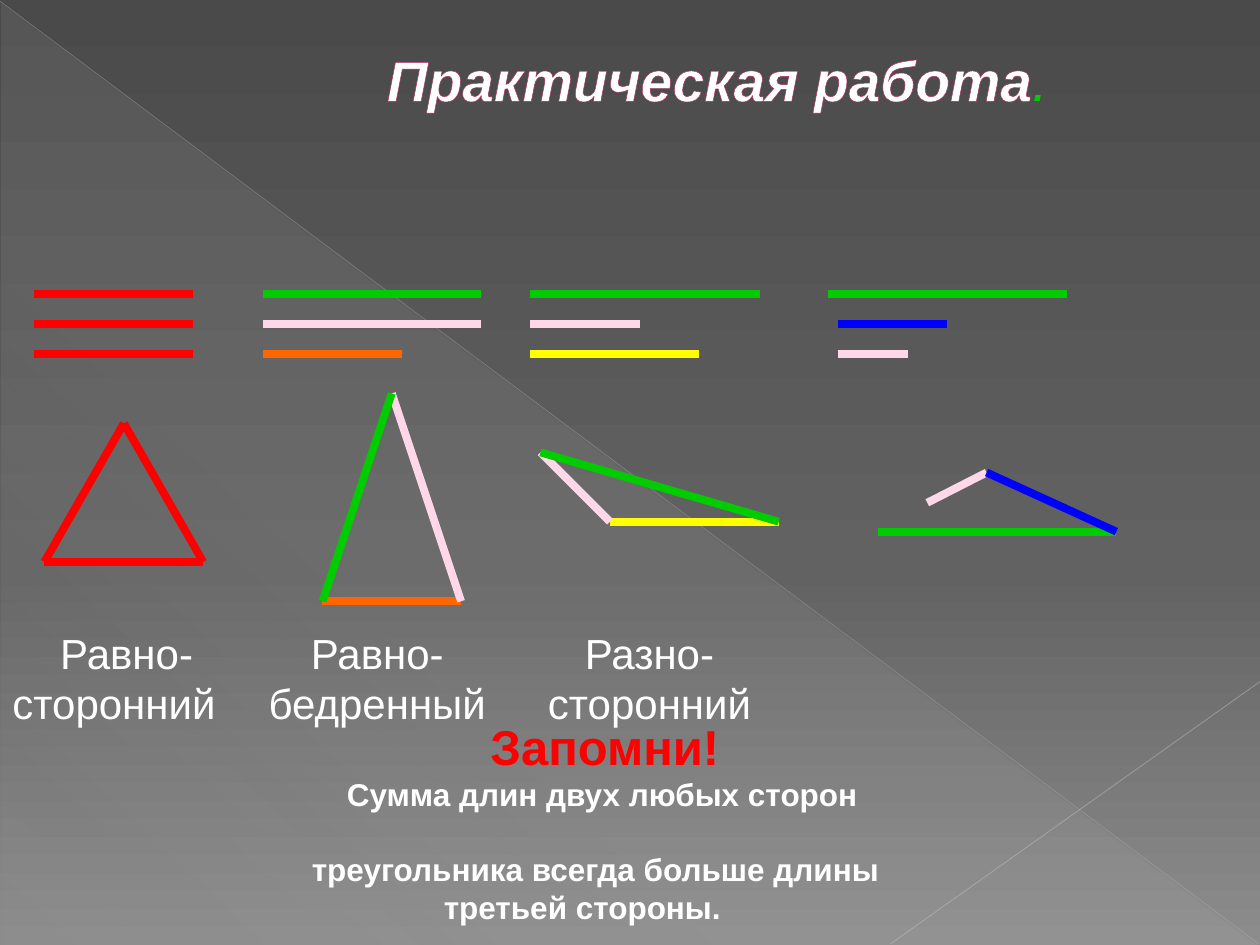
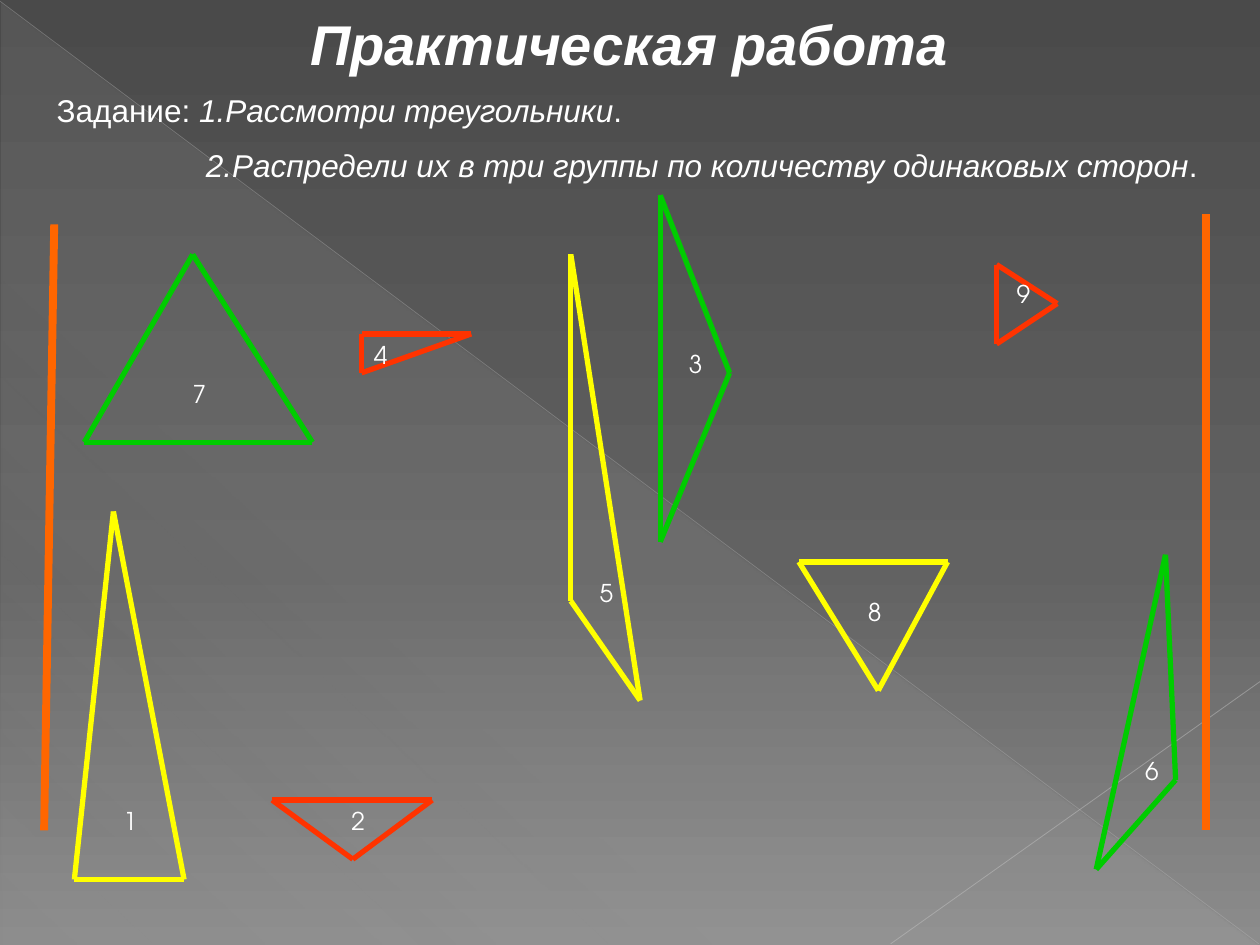
from lxml import etree
from pptx import Presentation
from pptx.dml.color import RGBColor
from pptx.enum.shapes import MSO_CONNECTOR as CONNECTOR, MSO_SHAPE as SHAPE
from pptx.enum.text import MSO_ANCHOR as ANCHOR, MSO_AUTO_SIZE as AUTOSIZE, PP_ALIGN as ALIGN
from pptx.oxml.ns import qn
from pptx.util import Pt

WHITE, RED, GREEN, YELLOW = "FFFFFF", "FF0000", "00CC00", "FFFF00"
PINK, ORANGE, BLUE, SCARLET = "FFD7E8", "FF6600", "0000FF", "FF3300"
TEXT_FONT, NUMBER_FONT = "Arial", "TeX Gyre Adventor"
THICK, THIN = 4.5, 3
HEADING = "Практическая работа"


def rgb(color):
    return RGBColor.from_string(color)


# Shared drawing helpers
def set_gradient(fill, owner, stops, angle):
    """Stops are (position %, colour, opacity %)."""
    fill.gradient()
    gradient = next(owner.iter(qn("a:gradFill")))
    for child in list(gradient):
        gradient.remove(child)
    stop_list = etree.SubElement(gradient, qn("a:gsLst"))
    for position, color, opacity in stops:
        stop = etree.SubElement(stop_list, qn("a:gs"), pos=str(position * 1000))
        tint = etree.SubElement(stop, qn("a:srgbClr"), val=color)
        etree.SubElement(tint, qn("a:alpha"), val=str(opacity * 1000))
    etree.SubElement(gradient, qn("a:lin"), ang=str(angle * 60000), scaled="0")


def draw_line(slide, color, start, end, width, origin=(0, 0), opacity=100):
    x, y = origin
    line = slide.shapes.add_connector(
        CONNECTOR.STRAIGHT, Pt(x + start[0]), Pt(y + start[1]), Pt(x + end[0]), Pt(y + end[1]))
    line.line.color.rgb = rgb(color)
    line.line.width = Pt(width)
    properties = line.element.spPr
    etree.SubElement(properties, qn("a:effectLst"))
    if opacity < 100:
        tint = next(properties.iter(qn("a:srgbClr")))
        etree.SubElement(tint, qn("a:alpha"), val=str(opacity * 1000))
    return line


def place(shape, box):
    shape.left, shape.top, shape.width, shape.height = map(Pt, box)


def style(font, size, color=WHITE, name=TEXT_FONT, bold=False, italic=False):
    font.size, font.name, font.bold, font.italic = Pt(size), name, bold, italic
    font.color.rgb = rgb(color)


def indent(paragraph, left):
    properties = paragraph._p.get_or_add_pPr()
    properties.set("marL", str(Pt(left)))
    properties.set("indent", "0")


def add_text(slide, box, lines, wrap=True):
    """Return the paragraphs of a new text box."""
    frame = slide.shapes.add_textbox(*map(Pt, box)).text_frame
    frame.word_wrap = wrap
    frame.text = "\n".join(lines)
    return frame.paragraphs


def set_heading(slide, box, size):
    title = slide.shapes.title
    place(title, box)
    frame = title.text_frame
    frame.auto_size = AUTOSIZE.NONE
    frame.vertical_anchor = ANCHOR.MIDDLE
    frame.text = HEADING
    paragraph = frame.paragraphs[0]
    style(paragraph.font, size, bold=True, italic=True)
    return paragraph


# Shared backdrop, kept on the slide master
def build_backdrop(master, slide):
    set_gradient(master.background.fill, master.element,
                 [(0, "4A4A4A", 100), (60, "626262", 100), (100, "8C8C8C", 100)], 90)
    glow = slide.shapes.add_shape(SHAPE.RIGHT_TRIANGLE, Pt(0.7), Pt(1.4), Pt(718.6), Pt(538.6))
    glow.shadow.inherit = False
    glow.line.fill.background()
    set_gradient(glow.fill, glow.element,
                 [(0, "D2D2D2", 10), (70, "D2D2D2", 8), (100, "D2D2D2", 1)], 133)
    diagonal = draw_line(slide, "BFBFBF", (0, 0.7), (719.3, 539.3), 0.39, opacity=35)
    corner = draw_line(slide, "C6C6C6", (720, 389.5), (509, 539.3), 0.47, opacity=45)
    tree = master.element.cSld.spTree
    for position, part in enumerate((glow, diagonal, corner), start=2):
        tree.insert(position, part.element)


# Slide 1: sticks and the triangles made of them
STICK_TOP, STICK_PITCH = 168, 17.15
# left edge; sticks (colour, offset, length); sides (colour, start, end) from the first stick
STICK_SETS = [
    (19.6,
     [(RED, 0, 90.7)] * 3,
     [(RED, (5.8, 153.1), (96.5, 153.1)),
      (RED, (51.2, 73.9), (96.5, 153.1)),
      (RED, (51.2, 73.9), (5.8, 153.1))]),
    (150.5,
     [(GREEN, 0, 124.6), (PINK, 0, 124.6), (ORANGE, 0, 79.2)],
     [(ORANGE, (33.8, 175.6), (113, 175.6)),
      (PINK, (73.4, 56.8), (113, 175.6)),
      (GREEN, (73.4, 56.8), (33.8, 175.6))]),
    (303.1,
     [(GREEN, 0, 131), (PINK, 0, 62.6), (YELLOW, 0, 96.5)],
     [(YELLOW, (45.4, 130.1), (141.9, 130.1)),
      (PINK, (45.4, 130.1), (5.8, 90.5)),
      (GREEN, (5.8, 90.5), (141.9, 130.1))]),
    (473,
     [(GREEN, 0, 136.8), (BLUE, 5.8, 62.6), (PINK, 5.8, 40.3)],
     [(GREEN, (28.8, 135.8), (164.9, 135.8)),
      (PINK, (56.9, 119.3), (90.8, 102)),
      (BLUE, (164.9, 135.8), (90.8, 102))]),
]
# box left, box width, lines, alignment of each line
KINDS = [
    (0, 144.7, ["Равно-", "сторонний"], [ALIGN.CENTER, ALIGN.LEFT]),
    (144.7, 141.8, ["Равно-бедренный"], [ALIGN.CENTER]),
    (303.1, 136.1, ["Разно-", "сторонний"], [ALIGN.CENTER] * 2),
]


def draw_stick_set(slide, origin, sticks, sides):
    for row, (color, offset, length) in enumerate(sticks):
        y = row * STICK_PITCH
        draw_line(slide, color, (offset, y), (offset + length, y), THICK, origin)
    for color, start, end in sides:
        draw_line(slide, color, start, end, THICK, origin)


def write_rule(slide, box):
    remember, *rule = add_text(slide, box, [
        "Запомни!", "Сумма длин двух любых сторон",
        "треугольника всегда больше длины", "третьей стороны."])
    remember.alignment = ALIGN.CENTER
    style(remember.font, 28, RED, bold=True)
    for paragraph, left in zip(rule, (75.2, 55.2, 130.6)):
        style(paragraph.font, 18, bold=True)
        paragraph.line_spacing = Pt(21.4)
        indent(paragraph, left)
    rule[1].space_before = Pt(21.4)


def build_sticks_slide(slide):
    heading = set_heading(slide, (56.9, 22.3, 620.6, 45.4), 32.4)
    heading.alignment = ALIGN.LEFT
    indent(heading, 157)
    outline = etree.Element(qn("a:ln"), w=str(Pt(0.5)))
    fill = etree.SubElement(outline, qn("a:solidFill"))
    etree.SubElement(fill, qn("a:srgbClr"), val="B12761")
    heading.runs[0].font._element.insert(0, outline)
    full_stop = heading.add_run()
    full_stop.text = "."
    style(full_stop.font, 32.4, GREEN, italic=True)

    for left, sticks, sides in STICK_SETS:
        draw_stick_set(slide, (left, STICK_TOP), sticks, sides)
    write_rule(slide, (115.9, 406, 459.4, 130))
    for left, width, lines, alignments in KINDS:
        for paragraph, alignment in zip(add_text(slide, (left, 355, width, 65.5), lines), alignments):
            paragraph.alignment = alignment
            style(paragraph.font, 24)


# Slide 2: numbered triangles to sort
# colour, box corner, vertices and number position from that corner
TRIANGLES = [
    (YELLOW, (42.5, 292.3), [(22.3, 0), (62.7, 210.3), (0, 210.3)], (20.9, 164.9)),
    (SCARLET, (155.5, 457.2), [(0, 0), (91.5, 0), (46.1, 33.8)], (38.2, 0)),
    (GREEN, (377.3, 111.6), [(0, 0), (39.6, 101.5), (0, 198)], (9.3, 84.2)),
    (SCARLET, (206.6, 190.8), [(0, 0), (62.7, 0), (0, 22.3)], (0, 0)),
    (YELLOW, (326.2, 145.4), [(0, 0), (0, 198), (39.6, 254.9)], (9.3, 181.5)),
    (GREEN, (626.4, 317), [(39.6, 0), (45.4, 128.7), (0, 179.8)], (20.9, 111.4)),
    (GREEN, (48.2, 145.4), [(61.9, 0), (130.3, 107.3), (0, 107.3)], (54.8, 67.7)),
    (YELLOW, (456.5, 321.1), [(0, 0), (85, 0), (45.4, 73.5)], (32.4, 16.6)),
    (SCARLET, (569.5, 151.2), [(0, 0), (34.6, 22.3), (0, 45.4)], (4.3, 5)),
]


def draw_triangle(slide, number, color, corner, vertices, number_at):
    for start, end in zip(vertices, vertices[1:] + vertices[:1]):
        draw_line(slide, color, start, end, THIN, corner)
    box = (corner[0] + number_at[0], corner[1] + number_at[1], 22.3, 23.8)
    label = add_text(slide, box, [str(number)], wrap=False)[0]
    style(label.font, 14, name=NUMBER_FONT)


def write_tasks(slide, box):
    tasks = slide.placeholders[1]
    place(tasks, box)
    frame = tasks.text_frame
    frame.auto_size = AUTOSIZE.NONE
    frame.text = "\n"
    steps = [
        (0, 10, ["Задание: ", "1.Рассмотри треугольники", "."]),
        (85.3, 0, ["2.Распредели их в три группы по количеству одинаковых сторон", "."]),
    ]
    for paragraph, (left, gap, pieces) in zip(frame.paragraphs, steps):
        style(paragraph.font, 18)
        paragraph.space_before, paragraph.space_after = Pt(0), Pt(gap)
        indent(paragraph, left)
        bullet = etree.Element(qn("a:buNone"))
        paragraph._p.pPr.find(qn("a:defRPr")).addprevious(bullet)
        for piece in pieces:
            run = paragraph.add_run()
            run.text = piece
            style(run.font, 18, italic=piece[0].isdigit())


def build_sorting_slide(slide):
    set_heading(slide, (25.2, 0, 669, 49), 32).alignment = ALIGN.CENTER
    write_tasks(slide, (25.2, 48.4, 676, 63))
    draw_line(slide, ORANGE, (689, 122.4), (689, 474.5), THICK)
    draw_line(slide, ORANGE, (25.2, 474.5), (31, 128.2), THICK)
    for number, triangle in enumerate(TRIANGLES, start=1):
        draw_triangle(slide, number, *triangle)


def main():
    prs = Presentation()
    prs.slide_width, prs.slide_height = Pt(720), Pt(540)
    sticks_slide = prs.slides.add_slide(prs.slide_layouts[5])
    sorting_slide = prs.slides.add_slide(prs.slide_layouts[1])
    build_backdrop(prs.slide_master, sticks_slide)
    build_sticks_slide(sticks_slide)
    build_sorting_slide(sorting_slide)
    prs.save("out.pptx")


if __name__ == "__main__":
    main()
